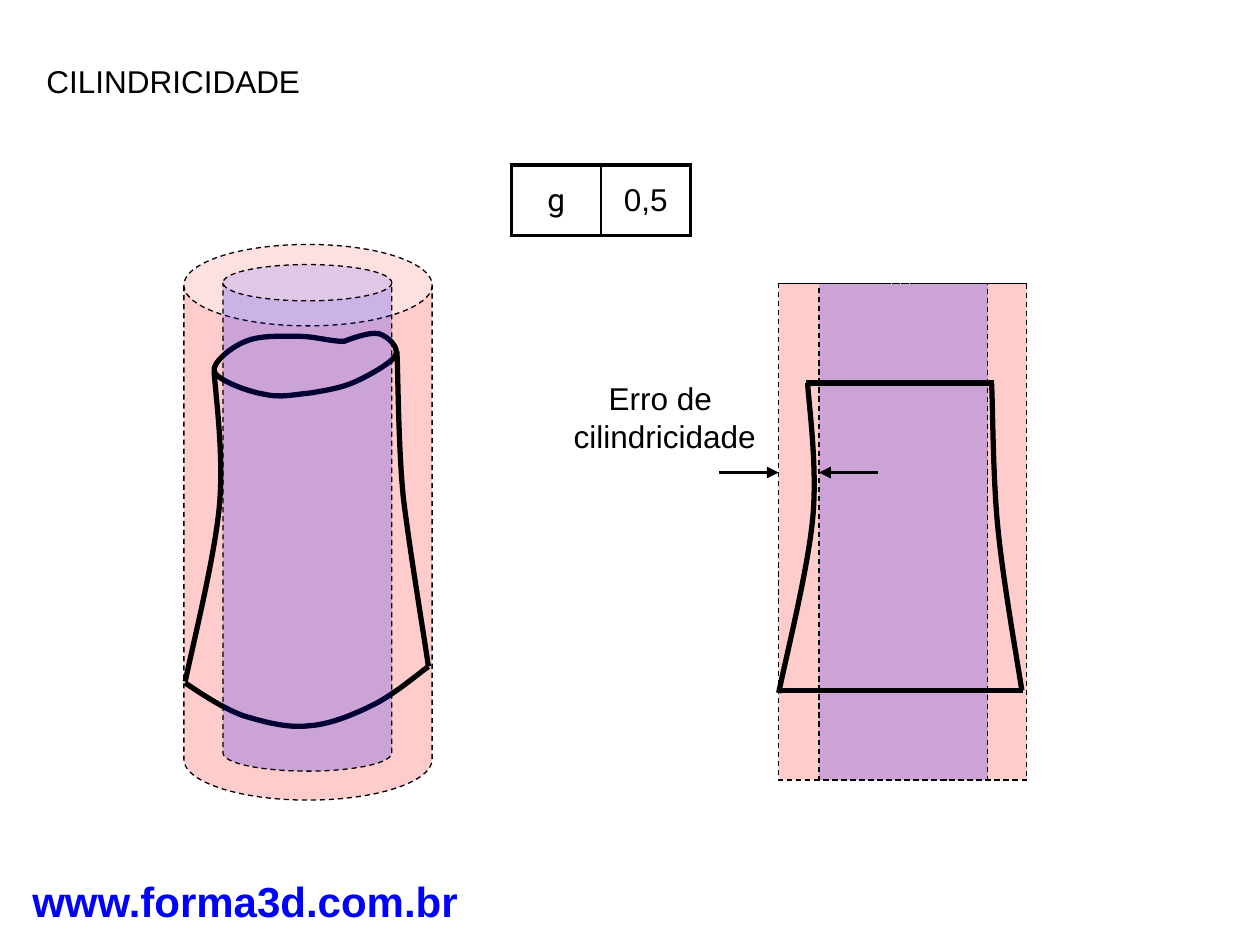
"""Builds a slide on the cylindricity tolerance."""
from lxml import etree
from pptx import Presentation
from pptx.dml.color import RGBColor
from pptx.enum.dml import MSO_LINE
from pptx.enum.shapes import MSO_CONNECTOR, MSO_SHAPE
from pptx.enum.text import MSO_ANCHOR, PP_ALIGN
from pptx.oxml.ns import qn
from pptx.util import Inches, Pt

CAN = MSO_SHAPE.CAN
STRAIGHT = MSO_CONNECTOR.STRAIGHT
DASH = MSO_LINE.DASH
MIDDLE = MSO_ANCHOR.MIDDLE
LEFT, CENTER = PP_ALIGN.LEFT, PP_ALIGN.CENTER
COLORS = {"ink": "000000", "zone": "FF0000", "core": "0000FF", "paper": "FFFFFF"}


def color(name):
    return RGBColor.from_string(COLORS[name])


def write(frame, text, size=18, font="Arial", tint="ink", bold=False, align=CENTER):
    para = frame.paragraphs[0]
    para.text = text
    para.alignment = align
    for run in para.runs:
        run.font.size = Pt(size)
        run.font.name = font
        run.font.bold = bold
        run.font.color.rgb = color(tint)


class Sketch:
    def __init__(self, slide):
        self.slide = slide
        self.shapes = slide.shapes

    def stroke(self, shape, width):
        shape.line.color.rgb = color("ink")
        shape.line.width = Pt(width)

    def text(self, box, text, **style):
        frame = self.shapes.add_textbox(*map(Inches, box)).text_frame
        frame.word_wrap = False
        write(frame, text, **style)

    def can(self, box, tint, curve=0):
        shape = self.shapes.add_shape(CAN, *map(Inches, box))
        shape.adjustments[0] = curve
        shape.shadow.inherit = False
        shape.fill.solid()
        shape.fill.fore_color.rgb = color(tint)
        fill = shape._element.spPr.find(qn("a:solidFill"))
        etree.SubElement(fill[0], qn("a:alpha"), val="20000")
        self.stroke(shape, 0.75)
        shape.line.dash_style = DASH

    def curve(self, points, close=False):
        start, *rest = [(Inches(x), Inches(y)) for x, y in points]
        pen = self.shapes.build_freeform(*start)
        pen.add_line_segments(rest, close=close)
        shape = pen.convert_to_shape()
        shape.shadow.inherit = False
        shape.fill.background()
        self.stroke(shape, 3)
        steps = list(shape._element.iter(qn("a:lnTo")))[:len(rest)]
        for i in range(0, len(steps), 3):
            bend = etree.Element(qn("a:cubicBezTo"))
            steps[i].addprevious(bend)
            for step in steps[i:i + 3]:
                bend.append(step[0])
                step.getparent().remove(step)

    def line(self, x1, x2, y, width=3, arrow=False):
        link = self.shapes.add_connector(
            STRAIGHT, Inches(x1), Inches(y), Inches(x2), Inches(y))
        self.stroke(link, width)
        if arrow:
            etree.SubElement(link.line._get_or_add_ln(), qn("a:tailEnd"), type="triangle")
        etree.SubElement(link._element.spPr, qn("a:effectLst"))

    def border(self, cell, widths):
        props = cell._tc.get_or_add_tcPr()
        for i, (side, width) in enumerate(zip("LRTB", widths)):
            edge = etree.Element(qn(f"a:ln{side}"), w=str(Pt(width)))
            fill = etree.SubElement(edge, qn("a:solidFill"))
            etree.SubElement(fill, qn("a:srgbClr"), val=COLORS["ink"])
            props.insert(i, edge)

    def table(self, box, cells):
        table = self.shapes.add_table(1, len(cells), *map(Inches, box)).table
        table.first_row = table.horz_banding = False
        for cell, (text, font, widths) in zip(table.rows[0].cells, cells):
            cell.vertical_anchor = MIDDLE
            cell.fill.solid()
            cell.fill.fore_color.rgb = color("paper")
            write(cell.text_frame, text, font=font)
            self.border(cell, widths)


def main():
    deck = Presentation()
    deck.slide_width, deck.slide_height = Inches(10), Inches(7.5)
    art = Sketch(deck.slides.add_slide(deck.slide_layouts[6]))

    art.text((0.15, 6.9, 3.59, 0.5), "www.forma3d.com.br", size=24, tint="core", bold=True)
    art.text((0.27, 0.44, 2.22, 0.4), "CILINDRICIDADE", align=LEFT)
    art.table((4.06, 1.31, 1.42, 0.56), [
        ("g", "Roboto", (2.25, 1, 2.25, 2.25)),
        ("0,5", "Arial", (1, 2.25, 2.25, 2.25)),
    ])

    art.can((1.46, 1.94, 1.97, 4.41), "zone", 0.328)
    art.curve([
        (2.73, 2.71), (2.62, 2.71), (2.5, 2.67), (2.37, 2.67),
        (2.24, 2.67), (2.06, 2.66), (1.95, 2.71),
        (1.84, 2.75), (1.68, 2.88), (1.7, 2.95),
        (1.73, 3.02), (1.97, 3.11), (2.1, 3.13),
        (2.23, 3.16), (2.34, 3.13), (2.46, 3.12),
        (2.58, 3.1), (2.71, 3.08), (2.82, 3.03),
        (2.93, 2.98), (3.11, 2.88), (3.14, 2.82),
        (3.17, 2.76), (3.08, 2.67), (3.01, 2.65),
        (2.94, 2.63), (2.78, 2.69), (2.73, 2.71)], close=True)
    side = [(1.7, 2.95), (1.71, 3.13), (1.78, 3.62), (1.74, 4.03),
            (1.7, 4.44), (1.53, 5.12), (1.47, 5.41)]
    art.curve(side)
    art.curve([(3.15, 2.79), (3.16, 2.98), (3.16, 3.52), (3.2, 3.94),
               (3.25, 4.36), (3.36, 5.01), (3.4, 5.29)])
    art.curve([
        (3.4, 5.29), (3.33, 5.34), (3.13, 5.51), (2.97, 5.59),
        (2.81, 5.67), (2.62, 5.75), (2.45, 5.76),
        (2.28, 5.78), (2.1, 5.73), (1.93, 5.68),
        (1.77, 5.62), (1.62, 5.52), (1.47, 5.42)])
    art.can((1.77, 2.1, 1.34, 4.02), "core", 0.215)

    art.can((6.18, 2.25, 1.97, 3.94), "zone")
    art.can((6.5, 2.25, 1.34, 3.94), "core")
    for start, end in ((5.71, 6.18), (6.97, 6.5)):
        art.line(start, end, 3.75, width=2.25, arrow=True)
    art.text((4.45, 2.96, 1.65, 0.7), "Erro de \ncilindricidade")
    art.curve([(x + 4.71, y + 0.09) for x, y in side])
    art.curve([(7.87, 3.04), (7.88, 3.23), (7.88, 3.79), (7.92, 4.19),
               (7.96, 4.6), (8.07, 5.22), (8.11, 5.48)])
    art.line(6.4, 7.89, 3.04)
    art.line(6.18, 8.12, 5.48)
    deck.save("out.pptx")


if __name__ == "__main__":
    main()
